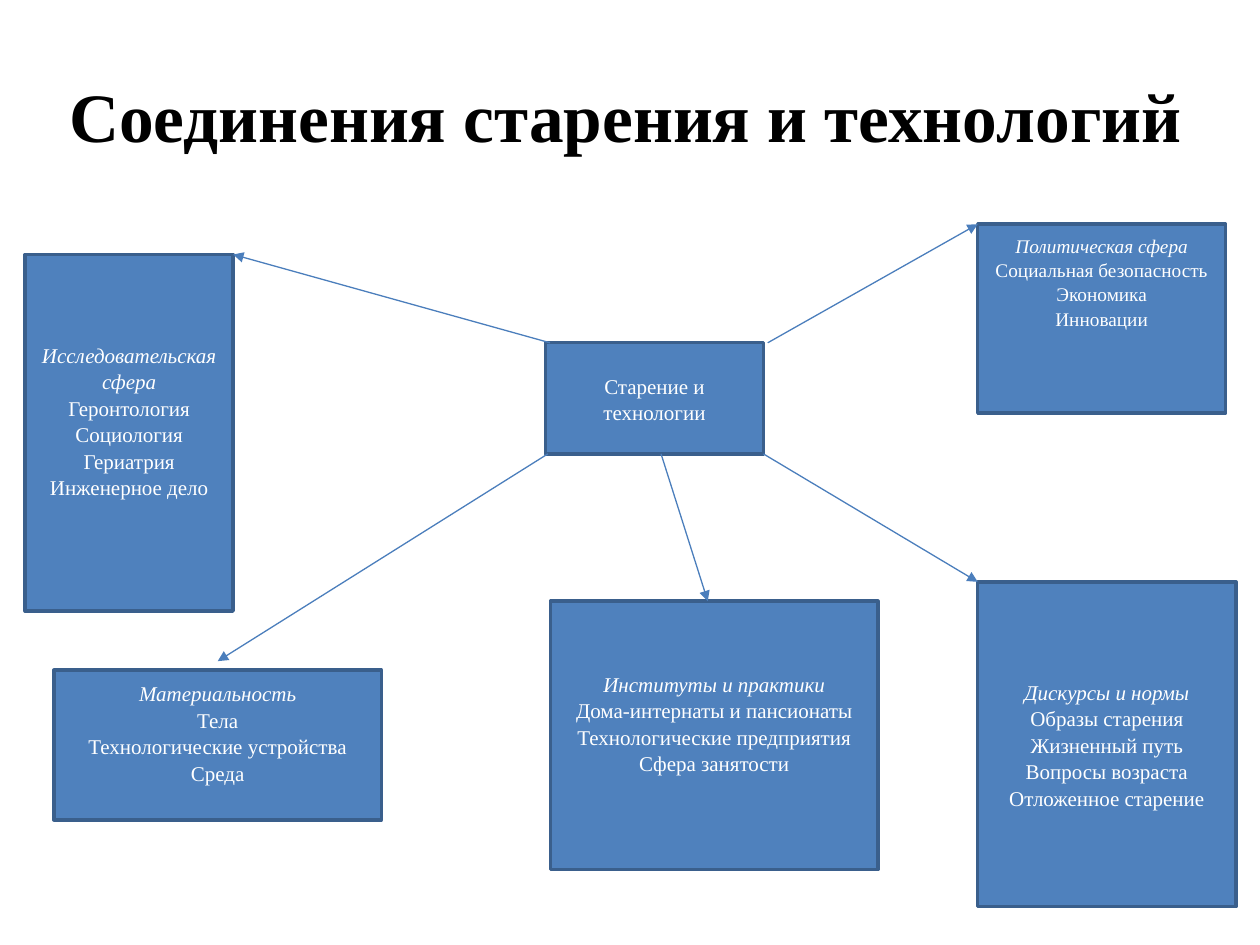
from dataclasses import dataclass

from lxml import etree
from pptx import Presentation
from pptx.dml.color import RGBColor
from pptx.enum.shapes import MSO_CONNECTOR, MSO_SHAPE
from pptx.enum.text import MSO_ANCHOR, PP_ALIGN
from pptx.oxml.ns import qn
from pptx.util import Cm, Pt

RECTANGLE = MSO_SHAPE.RECTANGLE
STRAIGHT = MSO_CONNECTOR.STRAIGHT
MIDDLE = MSO_ANCHOR.MIDDLE
CENTER = PP_ALIGN.CENTER


@dataclass(frozen=True)
class Theme:
    font: str = "Times New Roman"
    title_color: RGBColor = RGBColor(0x00, 0x00, 0x00)
    text_color: RGBColor = RGBColor(0xFF, 0xFF, 0xFF)
    box_fill: RGBColor = RGBColor(0x4F, 0x81, 0xBD)
    box_line: RGBColor = RGBColor(0x3A, 0x5F, 0x8C)
    arrow_color: RGBColor = RGBColor(0x4B, 0x7E, 0xBC)
    title_size: float = 39.6
    body_size: float = 12
    small_size: float = 11
    line_spacing: float = 1.05
    box_line_width: float = 2
    arrow_width: float = 0.75
    inset: float = 0.13


THEME = Theme()


@dataclass(frozen=True)
class Box:
    """A region of the slide, in centimetres."""
    left: float
    top: float
    width: float
    height: float

    def lengths(self):
        return Cm(self.left), Cm(self.top), Cm(self.width), Cm(self.height)

    def point(self, across, down):
        """A place given as fractions of the width and height."""
        return (Cm(self.left + across * self.width),
                Cm(self.top + down * self.height))


@dataclass(frozen=True)
class Sphere:
    box: Box
    heading: str
    items: tuple
    start: tuple  # fractions of the hub
    end: tuple  # fractions of the sphere's own box
    lift: float = 0  # extra space below the text
    size: float = THEME.body_size


TITLE_BOX = Box(1.09, 1.12, 23.04, 2.39)
HUB_BOX = Box(11, 6.91, 4.39, 2.24)

SPHERES = (
    Sphere(Box(0.51, 5.13, 4.19, 7.19), "Исследовательская сфера",
           ("Геронтология", "Социология", "Гериатрия", "Инженерное дело"),
           start=(0.02, 0), end=(1, 0), lift=0.5),
    Sphere(Box(19.71, 4.52, 5, 3.81), "Политическая сфера",
           ("Социальная безопасность", "Экономика", "Инновации"),
           start=(1.02, 0), end=(0, 0), lift=1.5, size=THEME.small_size),
    Sphere(Box(1.09, 13.51, 6.6, 3.02), "Материальность",
           ("Тела", "Технологические устройства", "Среда"),
           start=(0.01, 1), end=(0.5, -0.06), lift=0.5),
    Sphere(Box(11.1, 12.12, 6.6, 5.41), "Институты и практики",
           ("Дома-интернаты и пансионаты", "Технологические предприятия",
            "Сфера занятости"),
           start=(0.53, 1), end=(0.48, 0), lift=0.5),
    Sphere(Box(19.71, 11.73, 5.21, 6.55), "Дискурсы и нормы",
           ("Образы старения", "Жизненный путь", "Вопросы возраста",
            "Отложенное старение"),
           start=(1, 1), end=(0, 0)),
)


def write_text(shape, lines, *, size, color, bold=False,
               italic_heading=False, spacing=1.0, lift=0):
    """Fill a shape with centred paragraphs, one for each line."""
    frame = shape.text_frame
    frame.word_wrap = True
    frame.vertical_anchor = MIDDLE
    frame.margin_top = Cm(THEME.inset)
    frame.margin_bottom = Cm(THEME.inset + lift)
    for index, line in enumerate(lines):
        paragraph = frame.add_paragraph() if index else frame.paragraphs[0]
        paragraph.alignment = CENTER
        paragraph.line_spacing = spacing
        run = paragraph.add_run()
        run.text = line
        run.font.name = THEME.font
        run.font.size = Pt(size)
        run.font.color.rgb = color
        run.font.bold = bold
        run.font.italic = italic_heading and index == 0


def add_title(slide, box, text):
    shape = slide.shapes.add_textbox(*box.lengths())
    write_text(shape, [text], size=THEME.title_size,
               color=THEME.title_color, bold=True)
    shape.text_frame.margin_left = shape.text_frame.margin_right = 0


def add_panel(slide, box, lines, **text_format):
    """Add a filled rectangle with text."""
    shape = slide.shapes.add_shape(RECTANGLE, *box.lengths())
    shape.shadow.inherit = False
    shape.fill.solid()
    shape.fill.fore_color.rgb = THEME.box_fill
    shape.line.color.rgb = THEME.box_line
    shape.line.width = Pt(THEME.box_line_width)
    write_text(shape, lines, color=THEME.text_color,
               spacing=THEME.line_spacing, **text_format)


def add_sphere(slide, sphere):
    add_panel(slide, sphere.box, (sphere.heading, *sphere.items),
              size=sphere.size, italic_heading=True, lift=sphere.lift)


def add_arrow(slide, start, end):
    connector = slide.shapes.add_connector(STRAIGHT, *start, *end)
    connector.line.color.rgb = THEME.arrow_color
    connector.line.width = Pt(THEME.arrow_width)
    # Arrowhead at the far end, and no shadow
    outline = connector.line._get_or_add_ln()
    etree.SubElement(outline, qn("a:tailEnd"), type="triangle")
    etree.SubElement(connector._element.spPr, qn("a:effectLst"))


def main():
    presentation = Presentation()
    presentation.slide_width = Cm(25.4)
    presentation.slide_height = Cm(19.05)
    slide = presentation.slides.add_slide(presentation.slide_layouts[6])

    # Title and hub
    add_title(slide, TITLE_BOX, "Соединения старения и технологий")
    add_panel(slide, HUB_BOX, ["Старение и технологии"],
              size=THEME.body_size)

    # Spheres around the hub, then the arrows to them
    for sphere in SPHERES:
        add_sphere(slide, sphere)
    for sphere in SPHERES:
        add_arrow(slide, HUB_BOX.point(*sphere.start),
                  sphere.box.point(*sphere.end))

    presentation.save("out.pptx")


if __name__ == "__main__":
    main()
